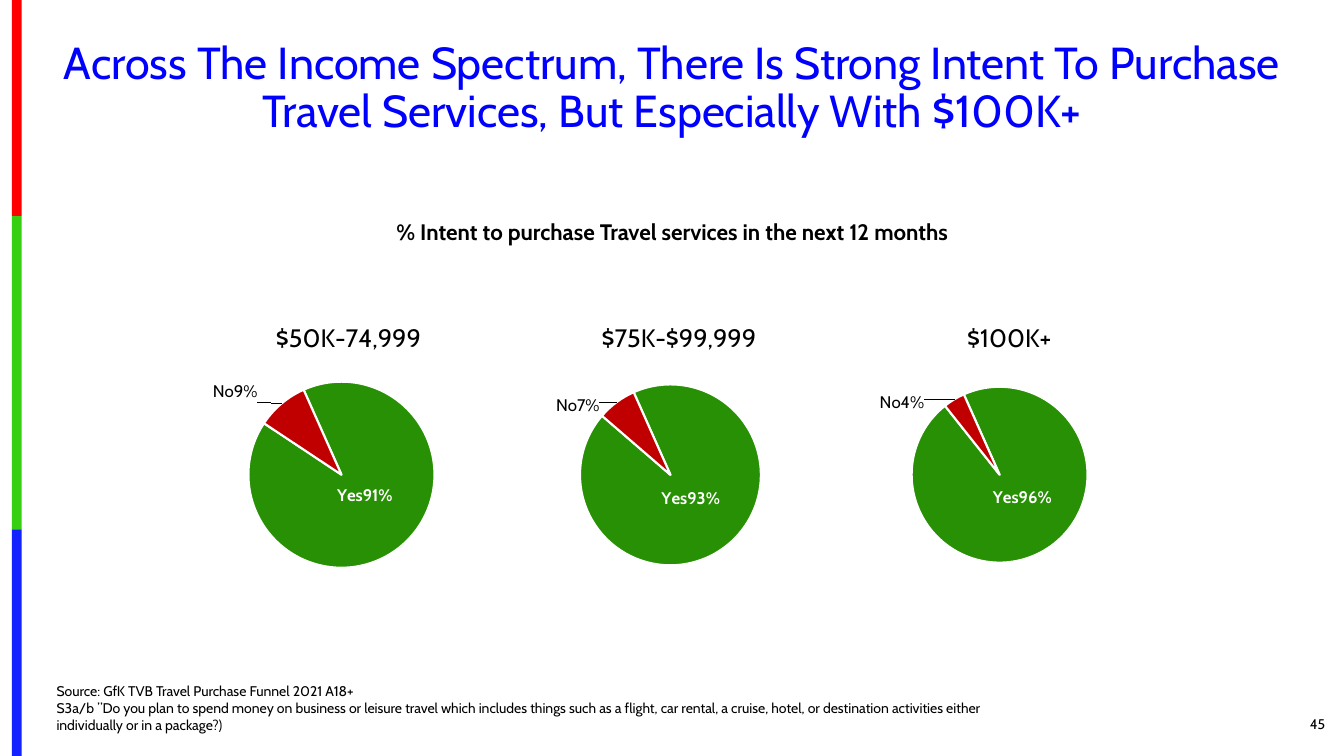
from dataclasses import dataclass

from lxml import etree
from pptx import Presentation
from pptx.chart.data import CategoryChartData
from pptx.dml.color import RGBColor
from pptx.enum.chart import XL_CHART_TYPE, XL_LABEL_POSITION
from pptx.enum.shapes import MSO_SHAPE
from pptx.enum.text import MSO_ANCHOR, MSO_AUTO_SIZE, PP_ALIGN
from pptx.oxml.ns import qn
from pptx.util import Cm, Pt

PIE = XL_CHART_TYPE.PIE
LABEL_CENTER = XL_LABEL_POSITION.CENTER
LABEL_OUTSIDE = XL_LABEL_POSITION.OUTSIDE_END
RECTANGLE = MSO_SHAPE.RECTANGLE
LEFT, CENTER, RIGHT = PP_ALIGN.LEFT, PP_ALIGN.CENTER, PP_ALIGN.RIGHT
TOP, MIDDLE = MSO_ANCHOR.TOP, MSO_ANCHOR.MIDDLE
NO_AUTOFIT = MSO_AUTO_SIZE.NONE


@dataclass(frozen=True)
class Theme:
    font: str = "Cabin"
    title_color: str = "0000FF"
    text_color: str = "000000"
    white: str = "FFFFFF"
    yes_color: str = "289004"
    no_color: str = "C00000"
    bar_colors: tuple = ("FE0000", "36CF12", "1322FE")
    title_size: int = 32
    chart_title_size: int = 18
    heading_size: int = 16
    label_size: int = 12
    small_size: int = 10


THEME = Theme()

CHART_TOP, CHART_WIDTH, CHART_HEIGHT = 7.44, 8.41, 7.54
CHART_LEFT, CHART_STEP = 4.57, 8.29
PIE_CENTER_X, PIE_CENTER_Y = 0.48, 0.6
START_ANGLE = 336

# Income group, yes share, pie diameter in cm, title left (share of width),
# shifts of the yes and no labels (shares of the chart's size)
INCOME_PIES = [
    ("$50K-74,999", 0.91, 4.69, 0.27, (-0.02, -0.05), (-0.06, 0.01)),
    ("$75K-$99,999", 0.93, 4.56, 0.26, (-0.02, -0.04), (-0.04, 0.06)),
    ("$100K+", 0.96, 4.43, 0.37, (0, -0.05), (-0.08, 0.06)),
]


def style_font(font, size, color, bold=False):
    font.name = THEME.font
    font.size = Pt(size)
    font.bold = bold
    font.color.rgb = RGBColor.from_string(color)


def fill_text(text_frame, lines, size, color, align, anchor=TOP, bold=False):
    """Write one paragraph, with a line break between the given lines."""
    text_frame.word_wrap = True
    text_frame.auto_size = NO_AUTOFIT
    text_frame.vertical_anchor = anchor
    paragraph = text_frame.paragraphs[0]
    paragraph.alignment = align
    paragraph.space_before = Pt(0)
    for index, line in enumerate(lines):
        if index:
            paragraph.add_line_break()
        run = paragraph.add_run()
        run.text = line
        style_font(run.font, size, color, bold)
    return paragraph


def place(shape, left, top, width, height):
    shape.left, shape.top = Cm(left), Cm(top)
    shape.width, shape.height = Cm(width), Cm(height)


def add_text_box(slide, box, text, size, align, anchor=TOP, bold=False):
    shape = slide.shapes.add_textbox(*map(Cm, box))
    fill_text(shape.text_frame, [text], size, THEME.text_color, align, anchor, bold)


def add_side_bars(slide):
    edges = (0, 5.45, 13.34, 19.05)
    for top, bottom, color in zip(edges, edges[1:], THEME.bar_colors):
        bar = slide.shapes.add_shape(RECTANGLE, Cm(0.3), Cm(top), Cm(0.25), Cm(bottom - top))
        bar.shadow.inherit = False
        bar.fill.solid()
        bar.fill.fore_color.rgb = RGBColor.from_string(color)
        bar.line.fill.background()


def set_layout(parent, position, **values):
    """Give a chart part a manual layout, as the child at this position."""
    for old_layout in parent.findall(qn("c:layout")):
        parent.remove(old_layout)
    layout = etree.Element(qn("c:layout"))
    manual = etree.SubElement(layout, qn("c:manualLayout"))
    for name, value in values.items():
        etree.SubElement(manual, qn(f"c:{name}")).set("val", str(value))
    parent.insert(position, layout)


def add_label(point, text, color, bold, position):
    label = point.data_label
    run = label.text_frame.paragraphs[0].add_run()
    run.text = text
    style_font(run.font, THEME.label_size, color, bold)
    label.position = position


def add_income_pie(slide, left, income, yes, diameter, title_left, *label_shifts):
    data = CategoryChartData(number_format="0%")
    data.categories = ["1", "2"]
    shares = (yes, round(1 - yes, 2))
    data.add_series("Series 1", shares)
    chart = slide.shapes.add_chart(
        PIE, Cm(left), Cm(CHART_TOP), Cm(CHART_WIDTH), Cm(CHART_HEIGHT), data
    ).chart
    chart.has_legend = False
    style_font(chart.font, THEME.small_size, THEME.text_color)

    # Title
    chart.has_title = True
    run = chart.chart_title.text_frame.paragraphs[0].add_run()
    run.text = income
    style_font(run.font, THEME.chart_title_size, THEME.text_color)
    set_layout(chart.chart_title.element if hasattr(chart.chart_title, "element")
               else chart.element.xpath(".//c:title")[0],
               1, xMode="edge", yMode="edge", x=title_left, y=0.07)

    # Slices and their labels
    plot = chart.plots[0]
    plot.vary_by_categories = True
    series = plot.series[0]
    labels = series.data_labels
    labels.show_value = True
    labels.number_format = "0%"
    labels.number_format_is_linked = False
    style_font(labels.font, THEME.label_size, THEME.text_color)
    slices = (
        ("Yes", THEME.yes_color, THEME.white, True, LABEL_CENTER),
        ("No", THEME.no_color, THEME.text_color, False, LABEL_OUTSIDE),
    )
    for index, (answer, fill, color, bold, position) in enumerate(slices):
        point = series.points[index]
        point.format.fill.solid()
        point.format.fill.fore_color.rgb = RGBColor.from_string(fill)
        point.format.line.color.rgb = RGBColor.from_string(THEME.white)
        point.format.line.width = Pt(1.5)
        add_label(point, f"{answer}{shares[index]:.0%}", color, bold, position)
    for label, (x, y) in zip(chart.element.xpath(".//c:dLbl"), label_shifts):
        set_layout(label, 1, x=x, y=y)

    # Pie place and rotation
    width, height = diameter / CHART_WIDTH, diameter / CHART_HEIGHT
    set_layout(chart.element.xpath(".//c:plotArea")[0], 0,
               layoutTarget="inner", xMode="edge", yMode="edge",
               x=round(PIE_CENTER_X - width / 2, 3), y=round(PIE_CENTER_Y - height / 2, 3),
               w=round(width, 3), h=round(height, 3))
    pie = chart.element.xpath(".//c:pieChart")[0]
    angle = pie.find(qn("c:firstSliceAng"))
    if angle is None:
        angle = etree.SubElement(pie, qn("c:firstSliceAng"))
    angle.set("val", str(START_ANGLE))


def add_title(slide, text):
    title = slide.shapes.title
    place(title, 1.17, 0.89, 31.55, 2.72)
    paragraph = fill_text(title.text_frame, [text], THEME.title_size, THEME.title_color, CENTER)
    paragraph.line_spacing = 0.9


def add_source_note(slide, lines):
    body = slide.placeholders[1]
    place(body, 1.17, 17.07, 24.46, 1.55)
    properties = body.text_frame.paragraphs[0]._p.get_or_add_pPr()
    properties.set("marL", "0")
    properties.set("indent", "0")
    etree.SubElement(properties, qn("a:buNone"))
    fill_text(body.text_frame, lines, THEME.small_size, THEME.text_color, LEFT)


def main():
    presentation = Presentation()
    presentation.slide_width, presentation.slide_height = Cm(33.87), Cm(19.05)
    slide = presentation.slides.add_slide(presentation.slide_layouts[1])

    add_side_bars(slide)
    add_title(slide, "Across The Income Spectrum, There Is Strong Intent To Purchase "
                     "Travel Services, But Especially With $100K+")
    add_text_box(slide, (7.42, 5.36, 19.05, 0.94),
                 "% Intent to purchase Travel services in the next 12 months",
                 THEME.heading_size, CENTER, bold=True)
    for index, income_pie in enumerate(INCOME_PIES):
        add_income_pie(slide, CHART_LEFT + index * CHART_STEP, *income_pie)
    add_source_note(slide, [
        "Source: GfK TVB Travel Purchase Funnel 2021 A18+",
        "S3a/b ”Do you plan to spend money on business or leisure travel which includes "
        "things such as a flight, car rental, a cruise, hotel, or destination activities "
        "either individually or in a package?)",
    ])
    add_text_box(slide, (30.91, 17.73, 2.74, 1.02), "45", THEME.small_size, RIGHT, MIDDLE)

    presentation.save("out.pptx")


if __name__ == "__main__":
    main()
